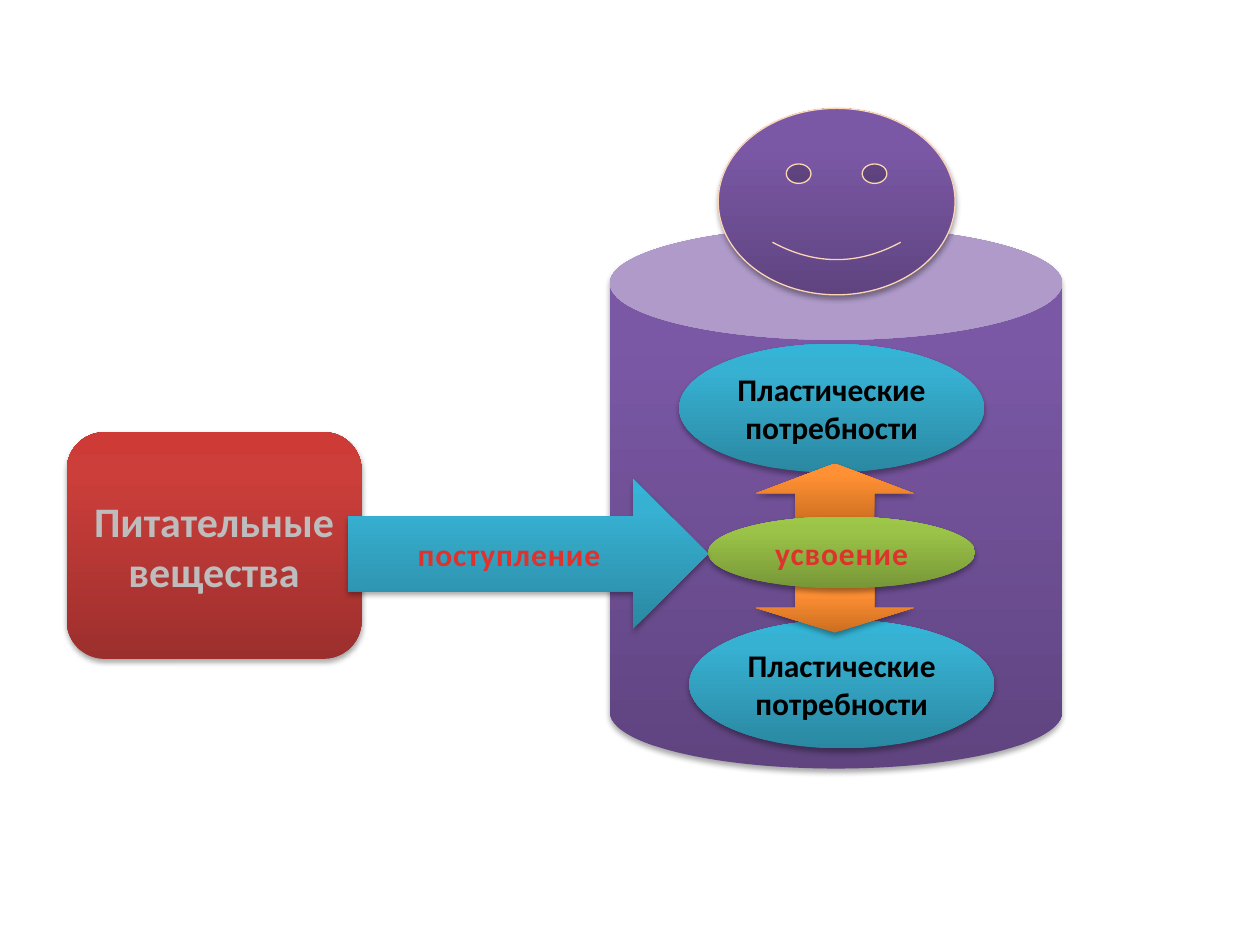
"""Builds the slide on nutrient supply and assimilation."""
import copy

import pptx
import pptx.dml.color
import pptx.enum.shapes
import pptx.enum.text
import pptx.oxml
import pptx.oxml.ns
import pptx.util

RGB = pptx.dml.color.RGBColor
SHAPE = pptx.enum.shapes.MSO_SHAPE
CELL = pptx.util.Inches(0.1)

PURPLE = (RGB(0x5F, 0x44, 0x80), RGB(0x7B, 0x58, 0xA6), RGB(0x7C, 0x57, 0xA8))
RED = (RGB(0x9C, 0x2F, 0x2D), RGB(0xCB, 0x3E, 0x3A), RGB(0xCE, 0x3B, 0x37))
TEAL = (RGB(0x2A, 0x88, 0xA2), RGB(0x37, 0xB1, 0xD2), RGB(0x34, 0xB4, 0xD6))
ORANGE = (RGB(0xCC, 0x6E, 0x20), RGB(0xFF, 0x90, 0x34), RGB(0xFF, 0x91, 0x36))
GREEN = (RGB(0x77, 0x97, 0x37), RGB(0x9B, 0xC3, 0x48), RGB(0x9D, 0xC7, 0x46))
LETTERING = (RGB(0xE0, 0x32, 0x2D), RGB(0xA2, 0x20, 0x1C))
PEACH = RGB(0xFC, 0xD5, 0xB5)
SILVER = RGB(0xBD, 0xBD, 0xBD)
BLACK = RGB(0, 0, 0)

SHADOW = (
    '<a:outerShdw xmlns:a="http://schemas.openxmlformats.org/drawingml/2006/main"'
    ' blurRad="40000" dist="23000" dir="5400000" rotWithShape="0">'
    '<a:srgbClr val="000000"><a:alpha val="35000"/></a:srgbClr></a:outerShdw>'
)


def paint(fill, element, colors, positions, angle):
    """Give a fill a linear gradient with one stop for each colour."""
    fill.gradient()
    fill.gradient_angle = angle
    stops = element.find(".//" + pptx.oxml.ns.qn("a:gsLst"))
    while len(stops) < len(colors):
        stops.append(copy.deepcopy(stops[0]))
    for stop, color, position in zip(fill.gradient_stops, colors, positions):
        stop.color.rgb = color
        stop.position = position


def add_part(slide, box, kind, cells, colors):
    """Add a shaded shape at grid cells counted from the corner of a box."""
    left, top, width, height = cells
    frame = (box[0] + left, box[1] + top, width, height)
    sp = slide.shapes.add_shape(kind, *(round(n * CELL) for n in frame))
    paint(sp.fill, sp._element.spPr, colors, (0, 0.8, 1), 90)
    sp.line.fill.background()
    sp.shadow.inherit = False
    effects = sp._element.spPr.find(pptx.oxml.ns.qn("a:effectLst"))
    effects.append(pptx.oxml.parse_xml(SHADOW))
    return sp


def write(sp, text, size, color=None):
    """Write centred bold text, in gradient lettering if no colour is given."""
    tf = sp.text_frame
    tf.text = text
    tf.word_wrap = True
    tf.vertical_anchor = pptx.enum.text.MSO_ANCHOR.MIDDLE
    p = tf.paragraphs[0]
    p.alignment = pptx.enum.text.PP_ALIGN.CENTER
    r = p.runs[0]
    r.font.name = "Calibri"
    r.font.size = pptx.util.Pt(size)
    r.font.bold = True
    if color is None:
        paint(r.font.fill, r._r, LETTERING, (0.25, 1), 270)
        r._r.get_or_add_rPr().set("spc", "50")
    else:
        r.font.color.rgb = color


def add_organism(slide, box):
    """Draw the body with its head, its needs and the assimilation arrows."""
    add_part(slide, box, SHAPE.CAN, (0, 9.4, 35.9, 43), PURPLE)
    for left, top in ((5.5, 18.7), (6.3, 40.6)):
        need = add_part(slide, box, SHAPE.OVAL, (left, top, 24.2, 10.2), TEAL)
        write(need, "Пластические потребности", 18, BLACK)
    head = add_part(slide, box, SHAPE.SMILEY_FACE, (8.6, 0, 18.8, 14.8), PURPLE)
    head.line.color.rgb = PEACH
    head.line.width = pptx.util.Pt(0.75)
    add_part(slide, box, SHAPE.DOWN_ARROW, (11.6, 37.7, 12.5, 3.9), ORANGE)
    add_part(slide, box, SHAPE.UP_ARROW, (11.6, 28.2, 12.5, 4.7), ORANGE)
    assimilation = add_part(slide, box, SHAPE.OVAL, (7.8, 32.4, 21.2, 5.7), GREEN)
    write(assimilation, "усвоение", 18)


def add_supply(slide, box):
    """Draw the nutrients and the arrow that carries them."""
    nutrients = add_part(slide, box, SHAPE.ROUNDED_RECTANGLE, (0, 0, 23.4, 18), RED)
    write(nutrients, "Питательные вещества", 24, SILVER)
    intake = add_part(slide, box, SHAPE.RIGHT_ARROW, (22.3, 3.7, 28.6, 11.9), TEAL)
    write(intake, "поступление", 18)


def main():
    """Build and save the slide on a grid of 100 columns and 75 rows."""
    prs = pptx.Presentation()
    prs.slide_width = 100 * CELL
    prs.slide_height = 75 * CELL
    slide = prs.slides.add_slide(prs.slide_layouts[6])
    add_organism(slide, (48.4, 8.6))
    add_supply(slide, (5.3, 34.3))
    prs.save("out.pptx")


if __name__ == "__main__":
    main()
